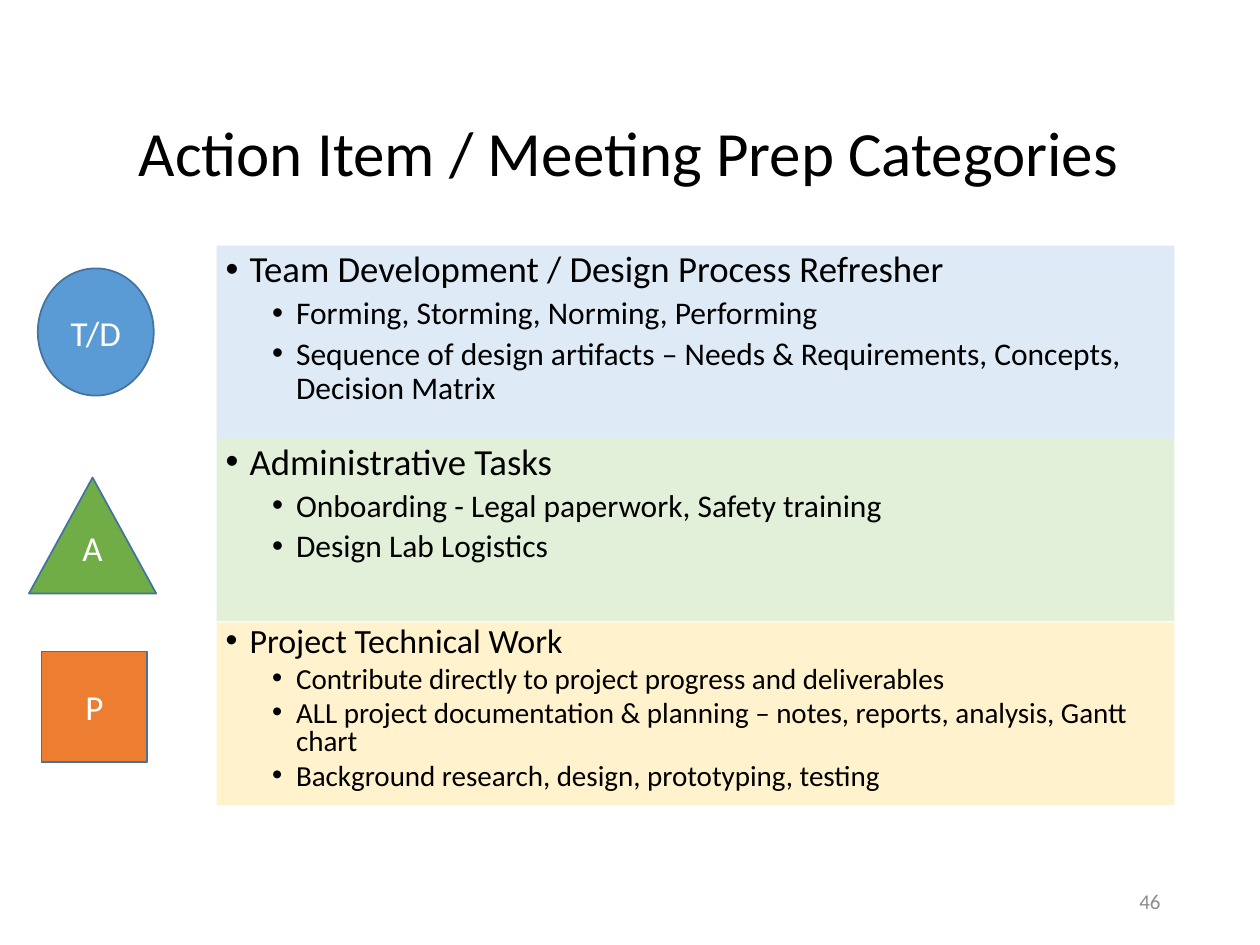
from lxml import etree
from pptx import Presentation
from pptx.dml.color import RGBColor
from pptx.enum.shapes import MSO_SHAPE
from pptx.enum.text import MSO_ANCHOR, MSO_AUTO_SIZE, PP_ALIGN
from pptx.oxml.ns import qn
from pptx.util import Inches, Pt

TOP, MID = MSO_ANCHOR.TOP, MSO_ANCHOR.MIDDLE
FIXED = MSO_AUTO_SIZE.NONE
LEFT, CENTER, RIGHT = PP_ALIGN.LEFT, PP_ALIGN.CENTER, PP_ALIGN.RIGHT
OVAL, PEAK, BOX = MSO_SHAPE.OVAL, MSO_SHAPE.ISOSCELES_TRIANGLE, MSO_SHAPE.RECTANGLE
COMPARE = 4

# Each list: placeholder index, top, height, fill, sizes, line spacing, lines
LISTS = [
    (1, 1.95, 1.54, "DEEBF7", (21, 18), 0.9, [
        "Team Development / Design Process Refresher",
        "Forming, Storming, Norming, Performing",
        "Sequence of design artifacts – Needs & Requirements, Concepts, Decision Matrix"]),
    (2, 3.48, 1.45, "E2F0D9", (21, 18), 0.9, [
        "Administrative Tasks",
        "Onboarding - Legal paperwork, Safety training",
        "Design Lab Logistics"]),
    (3, 4.94, 1.45, "FFF2CC", (19.4, 16.6), 0.8, [
        "Project Technical Work",
        "Contribute directly to project progress and deliverables",
        "ALL project documentation & planning – notes, reports, analysis, Gantt chart",
        "Background research, design, prototyping, testing"]),
]
BADGES = [
    (OVAL, "T/D", (0.3, 2.13, 0.92, 1.01), "5B9BD5", 0.05),
    (PEAK, "A", (0.23, 3.79, 1.01, 0.92), "70AD47", 0.32),
    (BOX, "P", (0.33, 5.17, 0.84, 0.88), "ED7D31", 0.05),
]


def color(target, code):
    """Give a fill or a font the hex colour."""
    if hasattr(target, "solid"):
        target.solid()
        target.fore_color.rgb = RGBColor.from_string(code)
    else:
        target.color.rgb = RGBColor.from_string(code)


def place(shape, left, top, width, height):
    """Move and size a shape, in inches."""
    shape.left, shape.top = Inches(left), Inches(top)
    shape.width, shape.height = Inches(width), Inches(height)


def frame(shape, anchor=MID, pad=(0.1, 0.05), base=0.05):
    """Set up the text frame of a shape and return it."""
    box = shape.text_frame
    box.word_wrap, box.auto_size, box.vertical_anchor = True, FIXED, anchor
    box.margin_left = box.margin_right = Inches(pad[0])
    box.margin_top, box.margin_bottom = Inches(pad[1]), Inches(base)
    return box


def write(para, text, size=20, ink="000000", align=LEFT, lead=1.0, before=0):
    """Write one formatted paragraph."""
    para.alignment, para.line_spacing, para.space_before = align, lead, Pt(before)
    run = para.add_run()
    run.text = text
    run.font.name, run.font.size, run.font.bold = "Calibri", Pt(size), False
    color(run.font, ink)


def bullet(para, level):
    """Indent a paragraph and give it a round bullet."""
    para.level = level
    props = para._p.get_or_add_pPr()
    props.set("marL", str(Inches(0.56 if level else 0.19)))
    props.set("indent", str(Inches(-0.19)))
    etree.SubElement(props, qn("a:buFont")).set("typeface", "Arial")
    etree.SubElement(props, qn("a:buChar")).set("char", "•")


def add_list(shape, top, height, fill, sizes, lead, lines):
    """Fill a body placeholder with a heading and its points."""
    place(shape, 1.72, top, 7.6, height)
    color(shape.fill, fill)
    box = frame(shape, TOP, (0.07, 0.04), 0.04)
    for i, line in enumerate(lines):
        para = box.add_paragraph() if i else box.paragraphs[0]
        level = min(i, 1)
        write(para, line, size=sizes[level], lead=lead, before=(7.5, 3.8)[level])
        bullet(para, level)


def add_badge(slide, kind, text, spot, fill, base):
    """Draw an outlined shape with a short label."""
    shape = slide.shapes.add_shape(kind, *map(Inches, spot))
    shape.shadow.inherit = False
    color(shape.fill, fill)
    color(shape.line.fill, "43739E")
    shape.line.width = Pt(1)
    write(frame(shape, base=base).paragraphs[0], text, ink="FFFFFF", align=CENTER)


def main():
    """Build the slide and save it."""
    deck = Presentation()
    deck.slide_width, deck.slide_height = Inches(10), Inches(7.5)
    slide = deck.slides.add_slide(deck.slide_layouts[COMPARE])
    title = slide.shapes.title
    place(title, 0.68, 0.69, 8.62, 1.09)
    write(frame(title).paragraphs[0], "Action Item / Meeting Prep Categories",
          size=36, align=CENTER, lead=0.9)
    bodies = {body.placeholder_format.idx: body for body in slide.placeholders}
    for idx, *rest in LISTS:
        add_list(bodies[idx], *rest)
    spare = bodies[4].element
    spare.getparent().remove(spare)
    for badge in BADGES:
        add_badge(slide, *badge)
    number = slide.shapes.add_textbox(*map(Inches, (7.06, 6.95, 2.25, 0.4)))
    write(frame(number).paragraphs[0], "46", size=12, ink="8C8C8C", align=RIGHT)
    deck.save("out.pptx")


if __name__ == "__main__":
    main()
